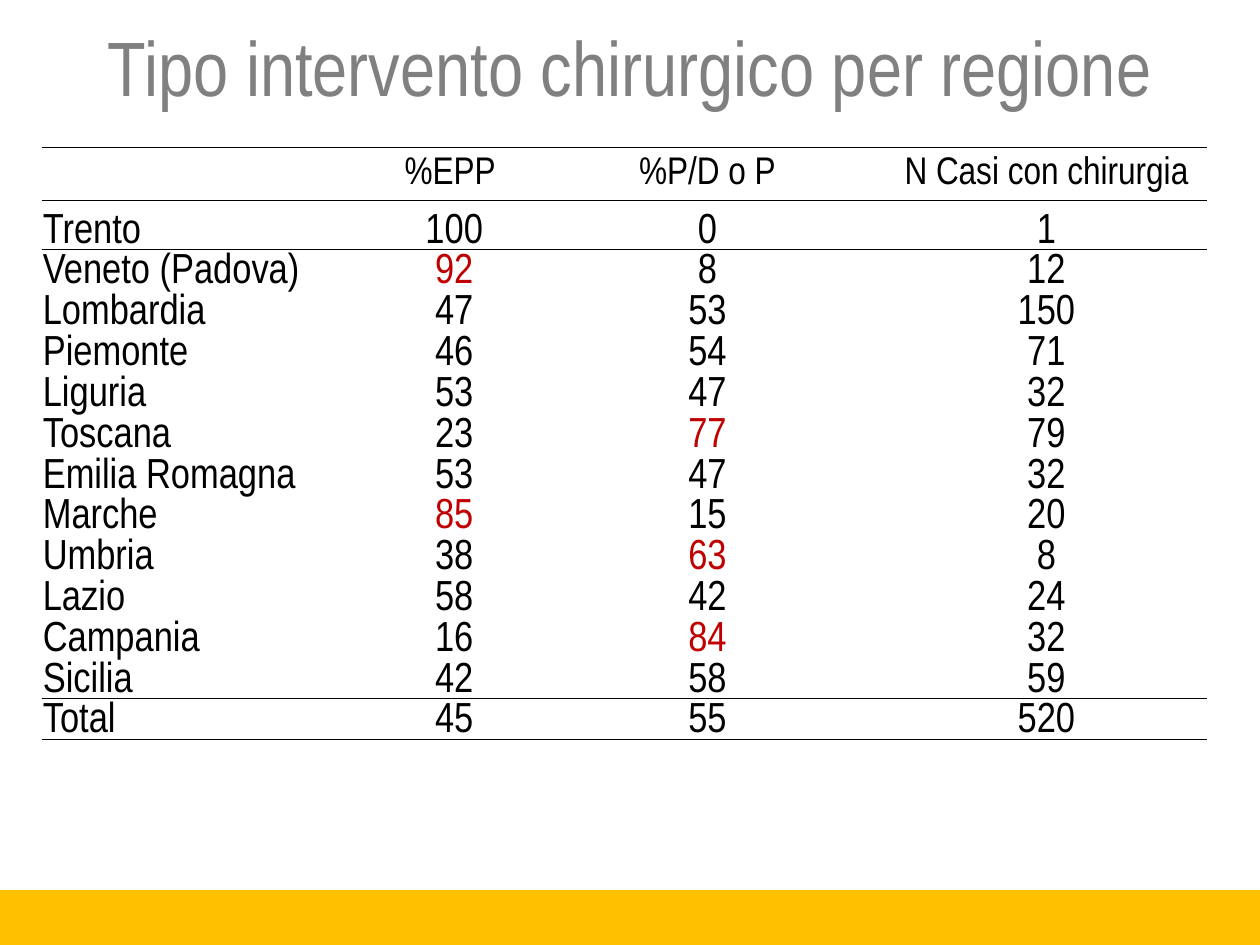
"""Build the slide on type of surgery by region."""
from lxml.etree import SubElement
from pptx import Presentation
from pptx.dml.color import RGBColor
from pptx.enum.shapes import MSO_SHAPE as Shape
from pptx.enum.text import MSO_ANCHOR as Anchor, PP_ALIGN as Align
from pptx.oxml.ns import qn
from pptx.util import Inches, Pt

COLORS = {"title": "808080", "text": "000000", "high": "C00000", "band": "FFC000"}
FONT = "Arial Narrow"
NO_STYLE = "{2D5ABB26-0587-4C30-8999-92F81FD0307C}"
HEADER = ("", "%EPP ", "%P/D o P", "N Casi con chirurgia")
REGIONS = [
    ("Trento", 100, 0, 1),
    ("Veneto (Padova)", 92, 8, 12),
    ("Lombardia", 47, 53, 150),
    ("Piemonte", 46, 54, 71),
    ("Liguria", 53, 47, 32),
    ("Toscana", 23, 77, 79),
    ("Emilia Romagna", 53, 47, 32),
    ("Marche", 85, 15, 20),
    ("Umbria", 38, 63, 8),
    ("Lazio", 58, 42, 24),
    ("Campania", 16, 84, 32),
    ("Sicilia", 42, 58, 59),
    ("Total", 45, 55, 520),
]
HIGHLIGHTS = {("Veneto (Padova)", 1), ("Marche", 1), ("Toscana", 2), ("Umbria", 2), ("Campania", 2)}


def style_text(paragraph, size, color, align):
    paragraph.alignment = align
    for span in paragraph.runs:
        span.font.name = FONT
        span.font.size = Pt(size)
        span.font.color.rgb = RGBColor.from_string(COLORS[color])


def add_border(cell, side):
    line = SubElement(cell._tc.get_or_add_tcPr(), qn(f"a:{side}"), w=str(Pt(1)))
    SubElement(SubElement(line, qn("a:solidFill")), qn("a:srgbClr"), val=COLORS["text"])


deck = Presentation()
deck.slide_width, deck.slide_height = Inches(10), Inches(7.5)
page = deck.slides.add_slide(deck.slide_layouts[5])

title = page.shapes.title
title.left, title.top, title.width, title.height = Inches(0.5), Inches(0.17), Inches(9), Inches(0.7)
title.text_frame.text = "Tipo intervento chirurgico per regione"
title.text_frame.vertical_anchor = Anchor.MIDDLE
style_text(title.text_frame.paragraphs[0], 44, "title", Align.CENTER)

rows = [HEADER, *REGIONS]
last = len(rows) - 1
frame = page.shapes.add_table(len(rows), len(HEADER), Inches(0.33), Inches(1.17), Inches(9.25), Inches(4.7))
table = frame.table
table.first_row = table.horz_banding = False
table._tbl.tblPr.find(qn("a:tableStyleId")).text = NO_STYLE
for column, width in zip(table.columns, (2.68, 1.19, 2.83, 2.55)):
    column.width = Inches(width)
for index, row in enumerate(table.rows):
    row.height = Inches({0: 0.42, 1: 0.39}.get(index, 3.89 / 12))

for r, values in enumerate(rows):
    for c, value in enumerate(values):
        cell = table.cell(r, c)
        cell.margin_left = cell.margin_right = cell.margin_top = Inches(0.01)
        cell.margin_bottom = 0
        cell.vertical_anchor = Anchor.BOTTOM if r else Anchor.MIDDLE
        cell.text_frame.text = str(value)
        para = cell.text_frame.paragraphs[0]
        color = "high" if (values[0], c) in HIGHLIGHTS else "text"
        style_text(para, 24 if r else 22, color, Align.CENTER if c else Align.LEFT)
        if r:
            para.line_spacing = 0.8
        if r in (0, 1, last):
            add_border(cell, "lnT")
        if r in (0, last - 1, last):
            add_border(cell, "lnB")
        cell.fill.background()

band = page.shapes.add_shape(Shape.RECTANGLE, 0, Inches(7.08), Inches(10), Inches(0.42))
band.shadow.inherit = False
band.fill.solid()
band.fill.fore_color.rgb = RGBColor.from_string(COLORS["band"])
band.line.color.rgb = RGBColor.from_string(COLORS["band"])
band.line.width = Pt(2)

deck.save("out.pptx")
